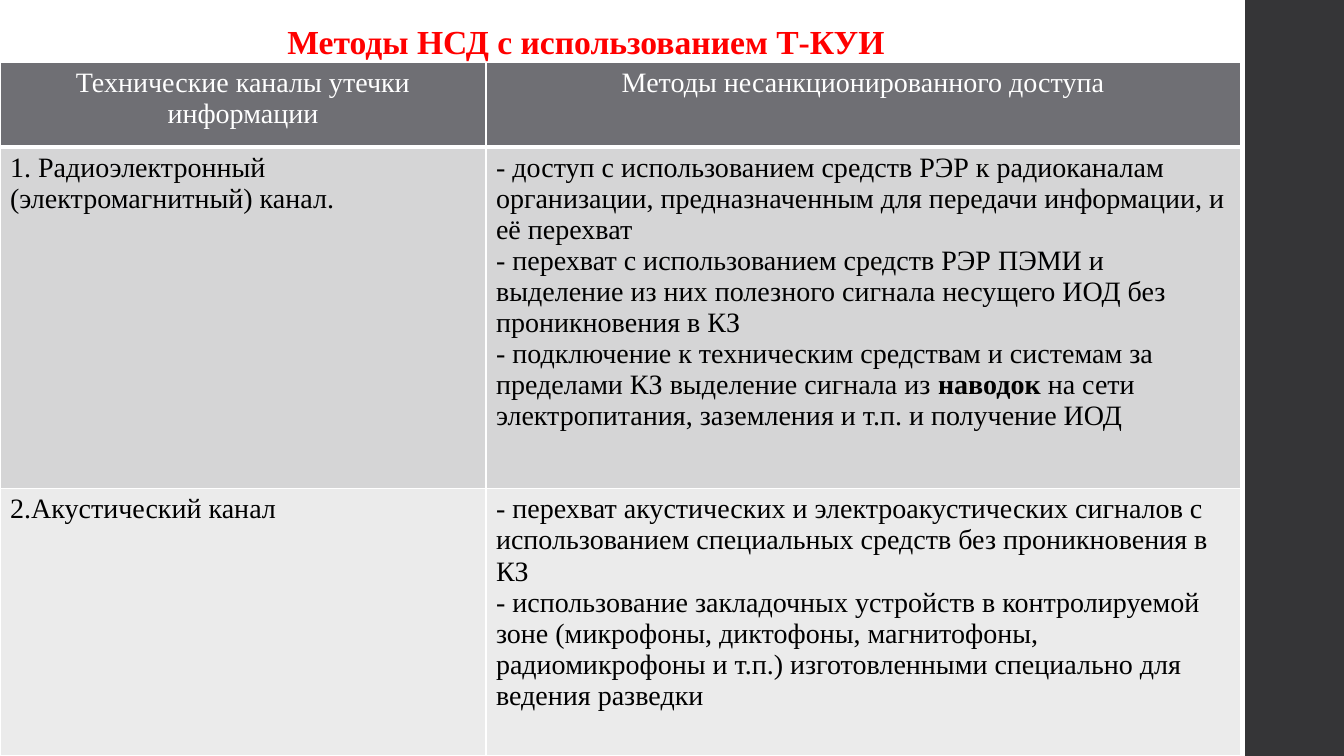
import dataclasses

import lxml.etree
import pptx
import pptx.dml.color
import pptx.enum.shapes
import pptx.enum.text
import pptx.oxml.ns
import pptx.util

Inches = pptx.util.Inches
Pt = pptx.util.Pt

FONT = "Times New Roman"
COLORS = {
    "title": "FF0000",
    "sidebar": "353537",
    "header": "6F6F74",
    "band_dark": "D5D5D6",
    "band_light": "EBEBEB",
    "white": "FFFFFF",
    "black": "000000",
}
BOLD_MARK = "**"
COLUMN_WIDTHS = (4.82, 7.48)


@dataclasses.dataclass(frozen=True)
class MethodRow:
    height: float
    fill: str
    text_color: str
    cells: tuple[list[str], list[str]]
    centered: bool = False
    bottom_border: int = 1


ROWS = [
    MethodRow(
        0.84, "header", "white",
        (["Технические каналы утечки информации"],
         ["Методы несанкционированного доступа"]),
        centered=True, bottom_border=3,
    ),
    MethodRow(
        3.39, "band_dark", "black",
        (["1. Радиоэлектронный", "(электромагнитный) канал."],
         ["- доступ с использованием средств РЭР к радиоканалам",
          "организации, предназначенным для передачи информации, и",
          "её перехват",
          "- перехват с использованием средств РЭР ПЭМИ и выделение из них "
          "полезного сигнала несущего ИОД без проникновения в КЗ",
          "- подключение к техническим средствам и системам за",
          "пределами КЗ выделение сигнала из **наводок **на сети "
          "электропитания, заземления и т.п. и получение ИОД"]),
    ),
    MethodRow(
        2.65, "band_light", "black",
        (["2.Акустический канал"],
         ["- перехват акустических и электроакустических сигналов с "
          "использованием специальных средств без проникновения в КЗ",
          "- использование закладочных устройств в контролируемой зоне "
          "(микрофоны, диктофоны, магнитофоны, радиомикрофоны и т.п.) "
          "изготовленными специально для ведения разведки"]),
    ),
]


def rgb(name: str) -> pptx.dml.color.RGBColor:
    return pptx.dml.color.RGBColor.from_string(COLORS[name])


def format_run(run, size: int, color: str, bold: bool) -> None:
    run.font.name = FONT
    run.font.size = Pt(size)
    run.font.bold = bold
    run.font.color.rgb = rgb(color)


def set_borders(cell, top: int, bottom: int) -> None:
    """Draw white lines, in points, around a cell."""
    qn = pptx.oxml.ns.qn
    properties = cell._tc.get_or_add_tcPr()
    for side, width in (("L", 1), ("R", 1), ("T", top), ("B", bottom)):
        line = lxml.etree.SubElement(properties, qn(f"a:ln{side}"), w=str(Pt(width)))
        fill = lxml.etree.SubElement(line, qn("a:solidFill"))
        lxml.etree.SubElement(fill, qn("a:srgbClr"), val=COLORS["white"])


def fill_cell(cell, lines: list[str], row: MethodRow, top_border: int) -> None:
    set_borders(cell, top_border, row.bottom_border)
    cell.fill.solid()
    cell.fill.fore_color.rgb = rgb(row.fill)
    cell.text_frame.text = "\n".join(lines)
    for paragraph, line in zip(cell.text_frame.paragraphs, lines):
        paragraph.text = ""
        if row.centered:
            paragraph.alignment = pptx.enum.text.PP_ALIGN.CENTER
        # Every second part between marks is bold
        for index, part in enumerate(line.split(BOLD_MARK)):
            run = paragraph.add_run()
            run.text = part
            format_run(run, 20, row.text_color, index % 2 == 1)


def add_sidebar(slide) -> None:
    sidebar = slide.shapes.add_shape(
        pptx.enum.shapes.MSO_SHAPE.RECTANGLE,
        Inches(12.35), 0, Inches(0.98), Inches(7.5))
    sidebar.shadow.inherit = False
    sidebar.fill.solid()
    sidebar.fill.fore_color.rgb = rgb("sidebar")
    sidebar.line.fill.background()


def add_methods_table(slide) -> None:
    table = slide.shapes.add_table(
        len(ROWS), len(COLUMN_WIDTHS), 0, Inches(0.62),
        Inches(sum(COLUMN_WIDTHS)), Inches(sum(row.height for row in ROWS))).table
    for column, width in zip(table.columns, COLUMN_WIDTHS):
        column.width = Inches(width)
    top_border = 1
    for row_index, row in enumerate(ROWS):
        table.rows[row_index].height = Inches(row.height)
        for column_index, lines in enumerate(row.cells):
            fill_cell(table.cell(row_index, column_index), lines, row, top_border)
        top_border = row.bottom_border


def place_title(slide) -> None:
    title = slide.shapes.title
    title.left, title.top = Inches(2.75), Inches(0.16)
    title.width, title.height = Inches(6.19), Inches(0.5)
    frame = title.text_frame
    frame.text = "Методы НСД с использованием Т-КУИ"
    frame.word_wrap = True
    frame.auto_size = pptx.enum.text.MSO_AUTO_SIZE.SHAPE_TO_FIT_TEXT
    frame.vertical_anchor = pptx.enum.text.MSO_ANCHOR.TOP
    paragraph = frame.paragraphs[0]
    paragraph.alignment = pptx.enum.text.PP_ALIGN.LEFT
    format_run(paragraph.runs[0], 24, "title", True)
    # Keep the title in front of the table
    slide.shapes._spTree.append(title._element)


def main() -> None:
    presentation = pptx.Presentation()
    presentation.slide_width = Inches(13.33)
    presentation.slide_height = Inches(7.5)
    slide = presentation.slides.add_slide(presentation.slide_layouts[5])
    add_sidebar(slide)
    add_methods_table(slide)
    place_title(slide)
    presentation.save("out.pptx")


if __name__ == "__main__":
    main()
